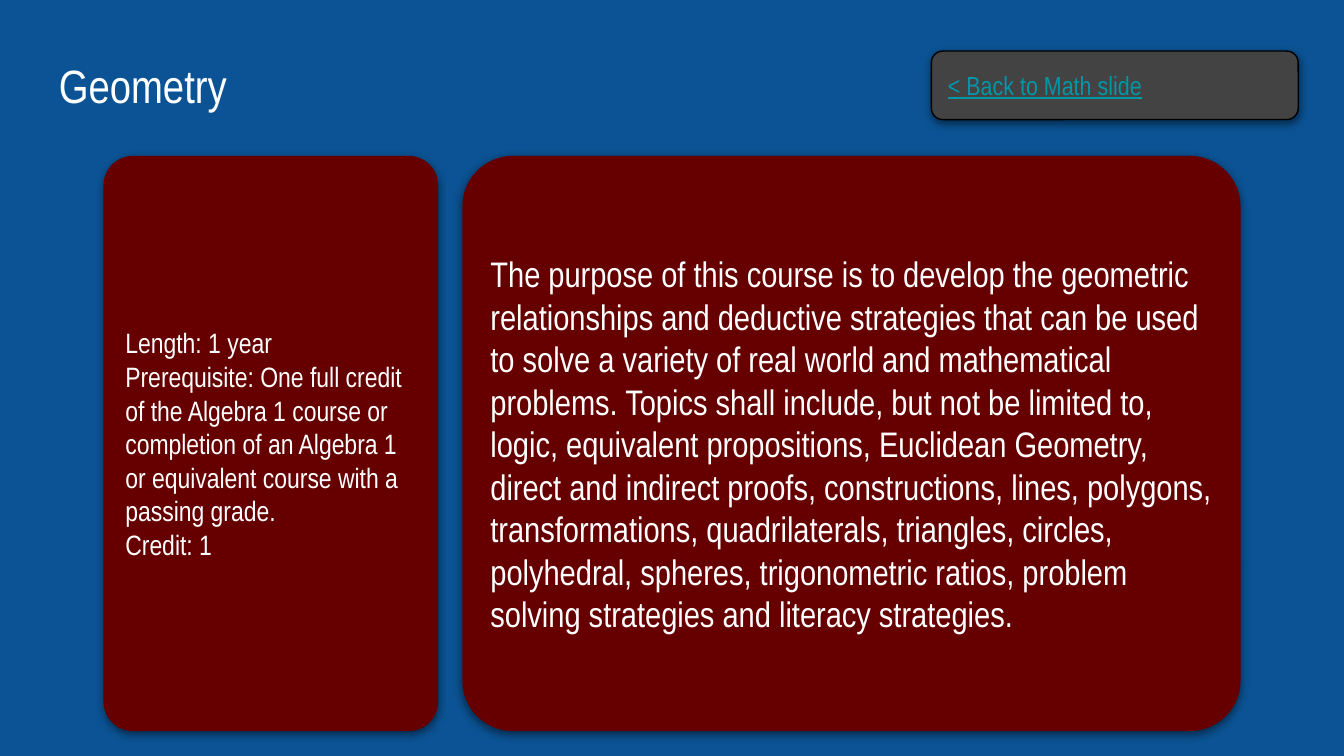
from lxml import etree
from pptx import Presentation
from pptx.dml.color import RGBColor
from pptx.enum.shapes import MSO_SHAPE
from pptx.enum.text import MSO_ANCHOR, PP_ALIGN
from pptx.oxml.ns import qn
from pptx.util import Inches, Pt

ROUNDED = MSO_SHAPE.ROUNDED_RECTANGLE
TOP, MIDDLE = MSO_ANCHOR.TOP, MSO_ANCHOR.MIDDLE
LEFT = PP_ALIGN.LEFT

COLORS = {
    "background": "0B5394",
    "card": "660000",
    "button": "434343",
    "text": "FFFFFF",
    "link": "0097A7",
    "black": "000000",
}
CARD_TOP, CARD_HEIGHT, CARD_ROUNDING = 1.16, 4.28, 0.088

COURSE_FACTS = [
    "Length: 1 year",
    "Prerequisite: One full credit of the Algebra 1 course or completion of an "
    "Algebra 1 or equivalent course with a passing grade.",
    "Credit: 1",
]
COURSE_PURPOSE = [
    "The purpose of this course is to develop the geometric relationships and "
    "deductive strategies that can be used to solve a variety of real world and "
    "mathematical problems. Topics shall include, but not be limited to, logic, "
    "equivalent propositions, Euclidean Geometry, direct and indirect proofs, "
    "constructions, lines, polygons, transformations, quadrilaterals, triangles, "
    "circles, polyhedral, spheres, trigonometric ratios, problem solving "
    "strategies and literacy strategies."
]


def rgb(name):
    return RGBColor.from_string(COLORS[name])


def write_text(box, lines, size, font="Arial Narrow", color="text", underline=None, anchor=MIDDLE):
    frame = box.text_frame
    frame.word_wrap = True
    frame.vertical_anchor = anchor
    frame.margin_left = frame.margin_right = Inches(0.1)
    frame.margin_top = frame.margin_bottom = Inches(0.1)
    for index, line in enumerate(lines):
        para = frame.add_paragraph() if index else frame.paragraphs[0]
        para.alignment = LEFT
        span = para.add_run()
        span.text = line
        span.font.name = font
        span.font.size = Pt(size)
        span.font.underline = underline
        span.font.color.rgb = rgb(color)


class CourseSlide:
    """Holds the style and the slide, and adds each kind of element."""

    def __init__(self, deck):
        self.slide = deck.slides.add_slide(deck.slide_layouts[6])
        fill = self.slide.background.fill
        fill.solid()
        fill.fore_color.rgb = rgb("background")

    def title(self, text, left, top, width, height):
        box = self.slide.shapes.add_textbox(*map(Inches, (left, top, width, height)))
        write_text(box, [text], 25, anchor=TOP)

    def panel(self, left, top, width, height, fill, rounding, outline=None):
        box = self.slide.shapes.add_shape(ROUNDED, *map(Inches, (left, top, width, height)))
        box.adjustments[0] = rounding
        box.fill.solid()
        box.fill.fore_color.rgb = rgb(fill)
        if outline:
            box.line.color.rgb = rgb(outline)
            box.line.width = Pt(0.75)
        else:
            box.line.fill.background()
        self.soft_shadow(box)
        return box

    def soft_shadow(self, box):
        box.shadow.inherit = False
        effects = box._element.spPr.find(qn("a:effectLst"))
        shadow = etree.SubElement(
            effects, qn("a:outerShdw"), blurRad=str(Pt(4.5)), dist=str(Pt(1.5)),
            dir="5400000", algn="bl", rotWithShape="0",
        )
        color = etree.SubElement(shadow, qn("a:srgbClr"), val=COLORS["black"])
        etree.SubElement(color, qn("a:alpha"), val="50000")

    def card(self, lines, left, width, size):
        box = self.panel(left, CARD_TOP, width, CARD_HEIGHT, "card", CARD_ROUNDING)
        write_text(box, lines, size)

    def button(self, text, left, top, width, height):
        box = self.panel(left, top, width, height, "button", 0.167, outline="black")
        write_text(box, [text], 14, color="link", underline=True)


def main():
    deck = Presentation()
    deck.slide_width, deck.slide_height = Inches(10), Inches(10 * 9 / 16)
    page = CourseSlide(deck)
    page.title("Geometry", 0.34, 0.32, 9.32, 0.63)
    page.card(COURSE_FACTS, 0.77, 2.49, 15)
    page.card(COURSE_PURPOSE, 3.44, 5.79, 19)
    page.button("< Back to Math slide", 6.93, 0.38, 2.73, 0.51)
    deck.save("out.pptx")


if __name__ == "__main__":
    main()
